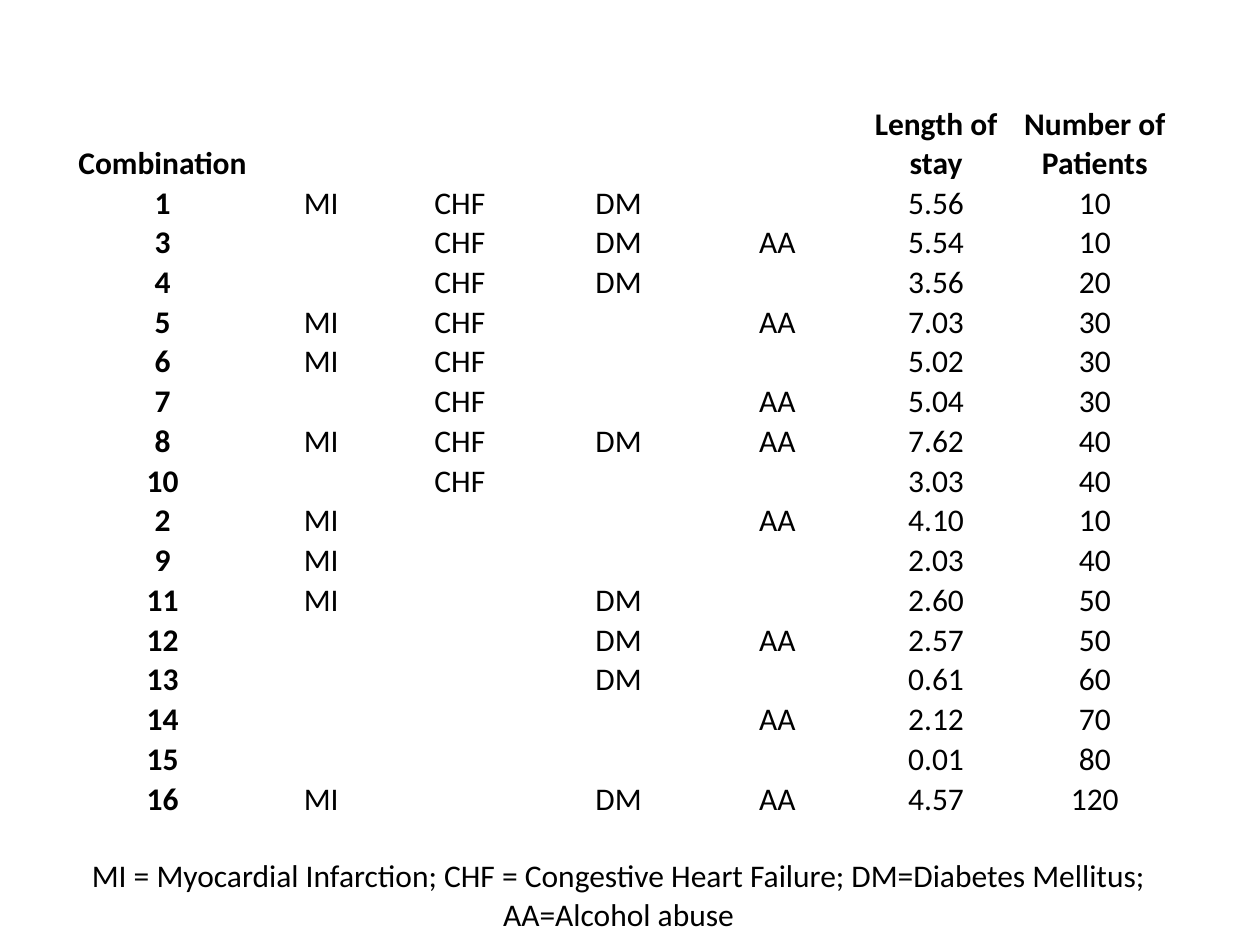
from pptx import Presentation
from pptx.dml.color import RGBColor
from pptx.enum.text import MSO_ANCHOR as Anchor, PP_ALIGN as Align
from pptx.util import Inches, Pt

COLUMN_WIDTHS = [1.58, 0.94] + [1.26] * 5
HEADER_HEIGHT, ROW_HEIGHT, LEGEND_HEIGHT = 0.62, 0.21, 0.41
LEGEND_GAP = 0.31
CONDITIONS = ["MI", "CHF", "DM", "AA"]
HEADER = ["Combination", "", "", "", "", "Length of stay", "Number of Patients"]
LEGEND = (
    "MI = Myocardial Infarction; CHF = Congestive Heart Failure; "
    "DM=Diabetes Mellitus; AA=Alcohol abuse"
)
COMBINATIONS = [
    ("1", "MI CHF DM", "5.56", "10"),
    ("3", "CHF DM AA", "5.54", "10"),
    ("4", "CHF DM", "3.56", "20"),
    ("5", "MI CHF AA", "7.03", "30"),
    ("6", "MI CHF", "5.02", "30"),
    ("7", "CHF AA", "5.04", "30"),
    ("8", "MI CHF DM AA", "7.62", "40"),
    ("10", "CHF", "3.03", "40"),
    ("2", "MI AA", "4.10", "10"),
    ("9", "MI", "2.03", "40"),
    ("11", "MI DM", "2.60", "50"),
    ("12", "DM AA", "2.57", "50"),
    ("13", "DM", "0.61", "60"),
    ("14", "AA", "2.12", "70"),
    ("15", "", "0.01", "80"),
    ("16", "MI DM AA", "4.57", "120"),
]


def color(value):
    return RGBColor.from_string(value)


def fill_cell(cell, text, bold):
    cell.fill.background()
    cell.vertical_anchor = Anchor.BOTTOM
    cell.margin_left = cell.margin_right = cell.margin_top = Inches(0.01)
    cell.margin_bottom = 0
    if not text:
        return
    cell.text_frame.text = text
    paragraph = cell.text_frame.paragraphs[0]
    paragraph.alignment = Align.CENTER
    font = paragraph.runs[0].font
    font.name = "Calibri"
    font.size = Pt(18)
    font.bold = bold
    font.color.rgb = color("000000")


def combination_row(number, present, stay, patients):
    marks = [name if name in present.split() else "" for name in CONDITIONS]
    return [number, *marks, stay, patients]


def add_stay_table(slide, left, top, width, height):
    rows = [HEADER] + [combination_row(*entry) for entry in COMBINATIONS]
    rows.append([LEGEND] + [""] * (len(HEADER) - 1))
    shape = slide.shapes.add_table(
        len(rows), len(HEADER), Inches(left), Inches(top), Inches(width), Inches(height)
    )
    table = shape.table
    table.first_row = table.horz_banding = False
    for column, column_width in zip(table.columns, COLUMN_WIDTHS):
        column.width = Inches(column_width)
    heights = [HEADER_HEIGHT] + [ROW_HEIGHT] * len(COMBINATIONS) + [LEGEND_HEIGHT]
    last = len(rows) - 1
    for i, (values, row_height) in enumerate(zip(rows, heights)):
        table.rows[i].height = Inches(row_height)
        for j, value in enumerate(values):
            fill_cell(table.cell(i, j), value, i == 0 or (j == 0 and i < last))
    legend = table.cell(last, 0)
    legend.merge(table.cell(last, len(HEADER) - 1))
    legend.margin_top = Inches(LEGEND_GAP)
    shape.width, shape.height = Inches(width), Inches(height)


def main():
    presentation = Presentation()
    presentation.slide_width = Inches(10)
    presentation.slide_height = Inches(7.5)
    slide = presentation.slides.add_slide(presentation.slide_layouts[6])
    add_stay_table(slide, 0.5, 0.83, 8.83, 6.5)
    presentation.save("out.pptx")


if __name__ == "__main__":
    main()
